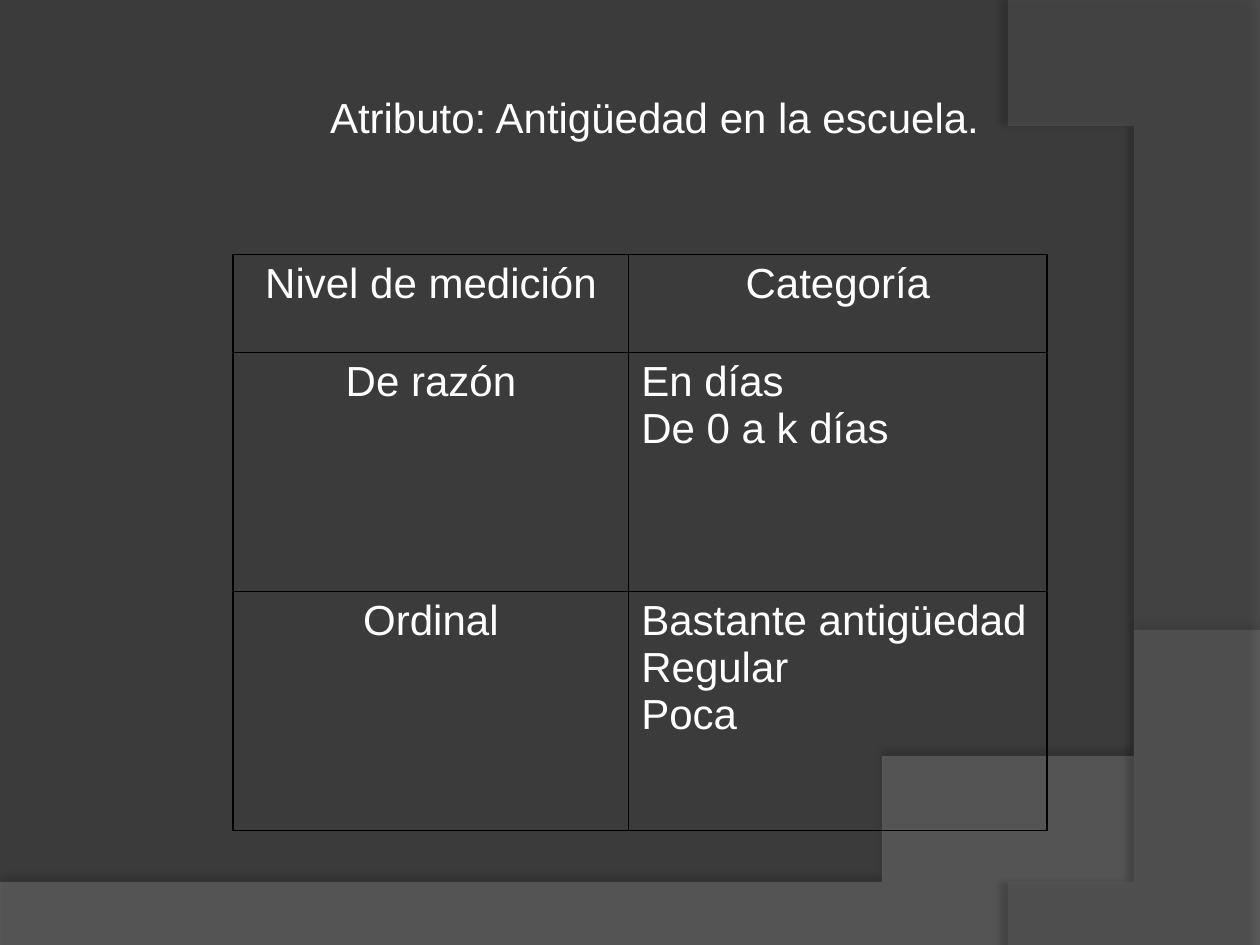
from dataclasses import dataclass

from lxml.etree import SubElement
from pptx import Presentation
from pptx.dml.color import RGBColor as RGB
from pptx.enum.text import MSO_ANCHOR as ANCHOR, PP_ALIGN as ALIGN
from pptx.oxml.ns import qn
from pptx.util import Inches, Pt


@dataclass(frozen=True)
class Theme:
    background: str = "3B3B3B"
    wave: str = "7F7F7F"
    arc: str = "5E5E5E"
    ink: str = "FFFFFF"
    line: str = "000000"
    font: str = "Arial"
    size: int = 24
    border: int = 1
    hanging: float = 0.38


THEME = Theme()
WIDTH, HEIGHT = 10, 7.5
CURVE_STEPS = 60

HEADER = ["Nivel de medición", "Categoría"]
LEVELS = [
    ["De razón", "En días\nDe 0 a k días"],
    ["Ordinal", "Bastante antigüedad\nRegular\nPoca"],
]


def put_text(tf, text, align=ALIGN.LEFT, hanging=0):
    """Write each line of text as one paragraph."""
    for i, line in enumerate(text.split("\n")):
        p = tf.paragraphs[0] if i == 0 else tf.add_paragraph()
        p.alignment = align
        if hanging:
            pPr = p._p.get_or_add_pPr()
            pPr.set("marL", str(Inches(hanging)))
            pPr.set("indent", str(-Inches(hanging)))
        r = p.add_run()
        r.text = line
        r.font.name, r.font.size = THEME.font, Pt(THEME.size)
        r.font.color.rgb = RGB.from_string(THEME.ink)


def add_color(parent, color, alpha=100):
    clr = SubElement(parent, qn("a:srgbClr"), val=color)
    if alpha < 100:
        SubElement(clr, qn("a:alpha"), val=str(alpha * 1000))


def bezier(start, c1, c2, end):
    """Points along a cubic curve, without its start."""
    for i in range(1, CURVE_STEPS + 1):
        t = i / CURVE_STEPS
        u = 1 - t
        weights = u**3, 3 * u * u * t, 3 * u * t * t, t**3
        yield tuple(sum(w * pt[k] for w, pt in zip(weights, (start, c1, c2, end)))
                    for k in (0, 1))


def add_swoosh(s, corners, curve, color, alpha, shadow):
    """Draw straight corners, then a curve from the last one, as a translucent shape.

    shadow is opacity in percent, blur and distance in points, direction in degrees.
    """
    builder = s.shapes.build_freeform(*corners[0], scale=Inches(1))
    points = corners[1:] + list(bezier(corners[-1], *curve))
    builder.add_line_segments(points, close=True)
    sp = builder.convert_to_shape()
    sp.line.fill.background()
    sp.fill.solid()
    sp.fill.fore_color.rgb = RGB.from_string(color)
    clr = sp._element.spPr.find(".//" + qn("a:srgbClr"))
    SubElement(clr, qn("a:alpha"), val=str(alpha * 1000))
    sp.shadow.inherit = False
    opacity, blur, dist, angle = shadow
    effects = sp._element.spPr.find(qn("a:effectLst"))
    outer = SubElement(effects, qn("a:outerShdw"), blurRad=str(Pt(blur)),
                       dist=str(Pt(dist)), dir=str(angle * 60000),
                       algn="ctr", rotWithShape="0")
    add_color(outer, THEME.line, opacity)


def add_background(s):
    fill = s.background.fill
    fill.solid()
    fill.fore_color.rgb = RGB.from_string(THEME.background)
    add_swoosh(s, [(0, 7.05), (0, HEIGHT), (WIDTH, HEIGHT), (WIDTH, 5.2)],
               [(5.59, 7.29), (3.91, 7.19), (0, 7.05)],
               THEME.wave, 45, (35, 4, 3.5, 270))
    add_swoosh(s, [(WIDTH, 0.02), (WIDTH, HEIGHT), (8.21, HEIGHT)],
               [(9.35, 6.19), (10.18, 3), (8, 0)],
               THEME.arc, 40, (45, 4, 4, 180))


def add_title(s, text, box):
    tf = s.shapes.add_textbox(*map(Inches, box)).text_frame
    tf.word_wrap = True
    tf.vertical_anchor = ANCHOR.MIDDLE
    put_text(tf, text, align=ALIGN.CENTER)


def add_borders(cell):
    tcPr = cell._tc.get_or_add_tcPr()
    for i, side in enumerate(("a:lnL", "a:lnR", "a:lnT", "a:lnB")):
        ln = tcPr.makeelement(qn(side), {"w": str(Pt(THEME.border))})
        add_color(SubElement(ln, qn("a:solidFill")), THEME.line)
        tcPr.insert(i, ln)


def add_level_table(s, rows, box, col_shares, row_shares):
    left, top, width, height = box
    table = s.shapes.add_table(len(rows), len(rows[0]), *map(Inches, box)).table
    table.first_row = table.horz_banding = False
    for col, share in zip(table.columns, col_shares):
        col.width = Inches(width * share / sum(col_shares))
    for row, share in zip(table.rows, row_shares):
        row.height = Inches(height * share / sum(row_shares))
    for i, texts in enumerate(rows):
        for j, text in enumerate(texts):
            cell = table.cell(i, j)
            cell.fill.background()
            add_borders(cell)
            centred = i == 0 or j == 0
            put_text(cell.text_frame, text, hanging=THEME.hanging,
                     align=ALIGN.CENTER if centred else ALIGN.LEFT)


def main():
    prs = Presentation()
    prs.slide_width, prs.slide_height = Inches(WIDTH), Inches(HEIGHT)
    s = prs.slides.add_slide(prs.slide_layouts[6])
    add_background(s)
    add_level_table(s, [HEADER] + LEVELS, (1.85, 2.02, 6.46, 4.57),
                    col_shares=(3.14, 3.32), row_shares=(0.78, 1.9, 1.9))
    add_title(s, "Atributo: Antigüedad en la escuela.", (2.4, 0.68, 5.59, 0.5))
    prs.save("out.pptx")


if __name__ == "__main__":
    main()
